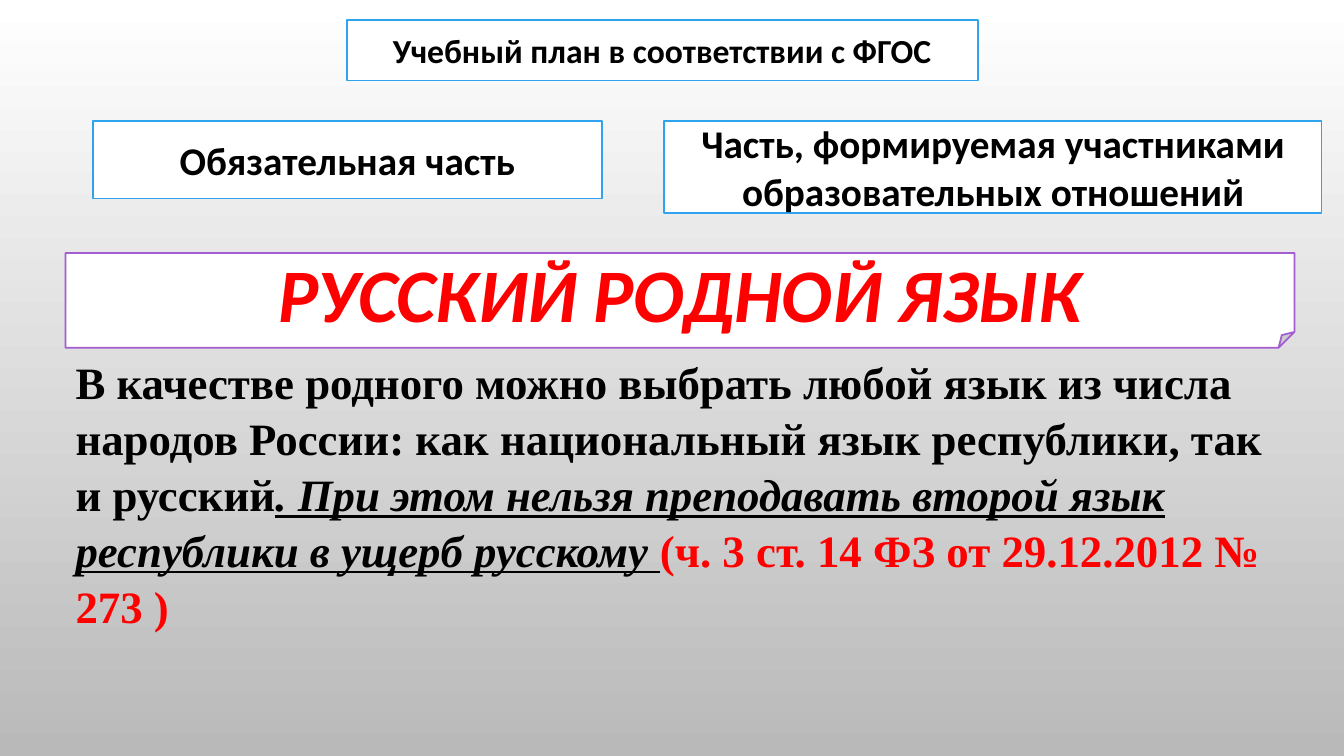
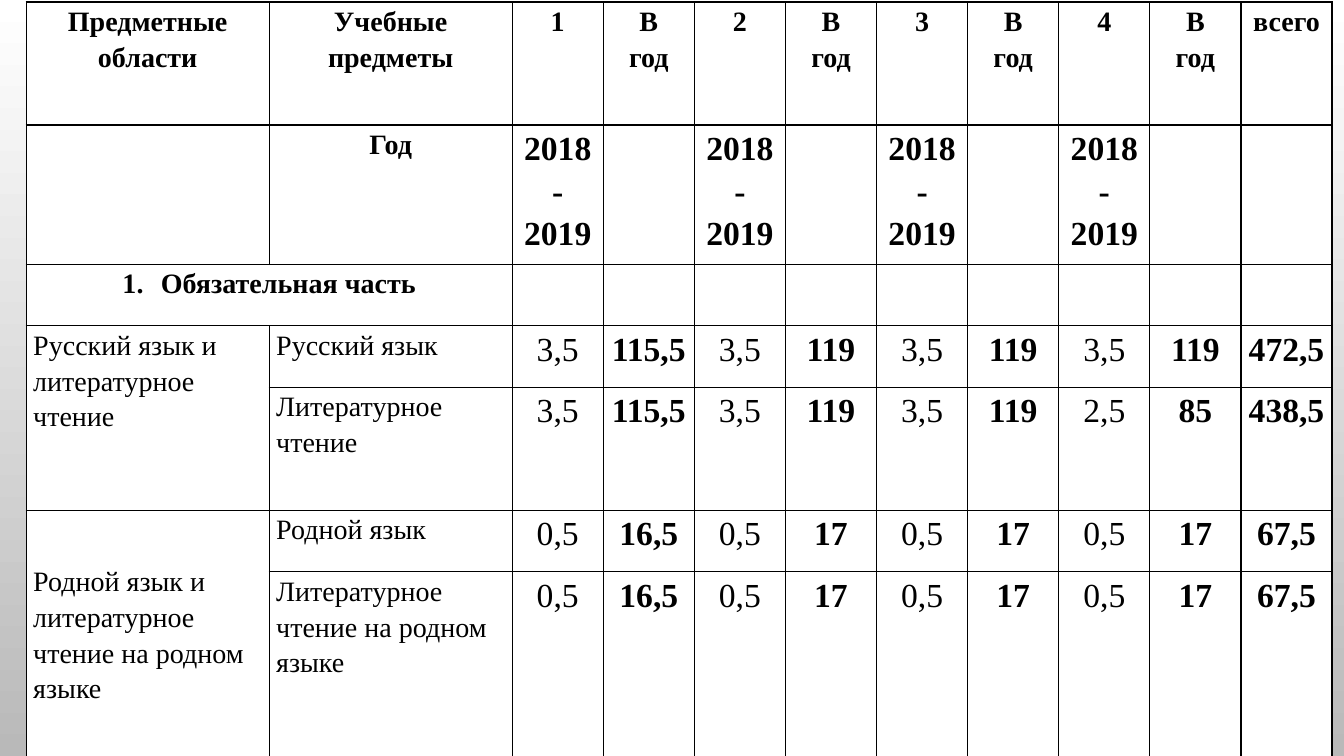
from dataclasses import dataclass
from itertools import product
from typing import Optional

from lxml import etree
from pptx import Presentation
from pptx import util as u
from pptx.dml.color import RGBColor
from pptx.enum import shapes, text
from pptx.oxml import ns

COLORS = {
    "white": "FFFFFF",
    "shade": "B9B9B9",
    "black": "000000",
    "red": "FF0000",
    "blue": "2FA3EE",
    "violet": "A35DD1",
}
SANS = "Calibri"
SERIF = "Times New Roman"
SLIDE_WIDTH = u.Inches(13.33)
SLIDE_HEIGHT = u.Inches(7.5)


@dataclass(frozen=True)
class Area:
    left: float
    top: float
    width: float
    height: float

    def lengths(self) -> tuple:
        return across(self.left), down(self.top), across(self.width), down(self.height)


@dataclass(frozen=True)
class Panel:
    area: Area
    words: str
    size: int
    preset: shapes.MSO_SHAPE = shapes.MSO_SHAPE.RECTANGLE
    line: str = "blue"
    color: str = "black"
    italic: bool = False


@dataclass(frozen=True)
class Passage:
    words: str
    color: str = "black"
    emphasis: bool = False


@dataclass(frozen=True)
class CellStyle:
    size: int
    bold: bool
    align: text.PP_ALIGN


PANELS = [
    Panel(Area(25.8, 2.67, 46.95, 8), "Учебный план в соответствии с ФГОС", 24),
    Panel(Area(49.43, 16, 48.9, 12.13),
          "Часть, формируемая участниками образовательных отношений", 28),
    Panel(Area(6.9, 16, 37.88, 10.27), "Обязательная часть", 28),
    Panel(Area(4.88, 33.47, 91.43, 12.53), "РУССКИЙ РОДНОЙ ЯЗЫК", 54,
          shapes.MSO_SHAPE.FOLDED_CORNER, "violet", "red", True),
]
LAW_AREA = Area(4.88, 46, 91.43, 37.2)
LAW_PASSAGES = [
    Passage("В качестве родного можно выбрать любой язык из числа народов России: "
            "как национальный язык республики, так и русский"),
    Passage(". При этом нельзя преподавать второй язык республики в ущерб русскому ",
            emphasis=True),
    Passage("(ч. 3 ст. 14 ФЗ от 29.12.2012 № 273 )", "red"),
]

PLAN_AREA = Area(1.95, 0.27, 97.18, 97.68)
SUBJECT_COLUMNS = 2
COLUMN_SHARES = [18.08] * SUBJECT_COLUMNS + [6.78] * 9
ROW_UNITS = [2, 2, 1, 1, 2, 1, 3]
ROW_UNIT = PLAN_AREA.height / sum(ROW_UNITS)
YEAR_ROW, SECTION_ROW, FIRST_SUBJECT_ROW, NATIVE_ROW = 1, 2, 3, 5
MERGES = [((2, 0), (2, 1)), ((3, 0), (4, 0)), ((5, 0), (6, 0))]
NATIVE_HOURS = "0,5 16,5 0,5 17 0,5 17 0,5 17 67,5".split()
PLAN_ROWS = [
    ["Предметные области", "Учебные предметы",
     *(label for grade in "1234" for label in (grade, "В\nгод")), "всего"],
    ["", "Год", *["2018-2019", ""] * 4, ""],
    ["Обязательная часть"],
    ["Русский язык и литературное чтение", "Русский язык",
     *"3,5 115,5 3,5 119 3,5 119 3,5 119 472,5".split()],
    ["", "Литературное чтение",
     *"3,5 115,5 3,5 119 3,5 119 2,5 85 438,5".split()],
    ["Родной язык и\nлитературное чтение на родном языке", "Родной язык", *NATIVE_HOURS],
    ["", "Литературное чтение на родном языке", *NATIVE_HOURS],
]


def across(percent: float) -> int:
    return round(SLIDE_WIDTH * percent / 100)


def down(percent: float) -> int:
    return round(SLIDE_HEIGHT * percent / 100)


def rgb(name: str) -> RGBColor:
    return RGBColor.from_string(COLORS[name])


def set_font(font, name: str, size: int, color: str = "black",
             bold: bool = True, italic: Optional[bool] = None) -> None:
    font.name = name
    font.size = u.Pt(size)
    font.bold = bold
    font.italic = italic
    font.color.rgb = rgb(color)


def set_background(presentation) -> None:
    fill = presentation.slide_master.background.fill
    fill.gradient()
    fill.gradient_angle = 270
    for stop, name in zip(fill.gradient_stops, ("white", "shade")):
        stop.color.rgb = rgb(name)


def add_panel(slide, panel: Panel) -> None:
    shape = slide.shapes.add_shape(panel.preset, *panel.area.lengths())
    shape.shadow.inherit = False
    shape.fill.solid()
    shape.fill.fore_color.rgb = rgb("white")
    shape.line.color.rgb = rgb(panel.line)
    shape.line.width = u.Pt(1.25)
    frame = shape.text_frame
    frame.word_wrap = True
    frame.vertical_anchor = text.MSO_ANCHOR.MIDDLE
    paragraph = frame.paragraphs[0]
    paragraph.text = panel.words
    paragraph.alignment = text.PP_ALIGN.CENTER
    set_font(paragraph.font, SANS, panel.size, panel.color, italic=panel.italic)


def add_law_text(slide) -> None:
    frame = slide.shapes.add_textbox(*LAW_AREA.lengths()).text_frame
    frame.word_wrap = True
    paragraph = frame.paragraphs[0]
    paragraph.line_spacing = 1.04
    set_font(paragraph.font, SERIF, 32)
    for passage in LAW_PASSAGES:
        run = paragraph.add_run()
        run.text = passage.words
        run.font.color.rgb = rgb(passage.color)
        run.font.italic = passage.emphasis
        run.font.underline = passage.emphasis


def set_borders(cell) -> None:
    properties = cell._tc.get_or_add_tcPr()
    for side in ("lnL", "lnR", "lnT", "lnB"):
        border = etree.SubElement(properties, ns.qn(f"a:{side}"), w=str(u.Pt(1)))
        fill = etree.SubElement(border, ns.qn("a:solidFill"))
        etree.SubElement(fill, ns.qn("a:srgbClr"), val=COLORS["black"])


def number_paragraph(paragraph) -> None:
    properties = paragraph._p.get_or_add_pPr()
    indent = u.Inches(0.38)
    properties.set("marL", str(indent))
    properties.set("indent", str(-indent))
    etree.SubElement(properties, ns.qn("a:buFont"), typeface="+mj-lt")
    etree.SubElement(properties, ns.qn("a:buAutoNum"), type="arabicPeriod")


def cell_style(row: int, column: int) -> CellStyle:
    heading = row < FIRST_SUBJECT_ROW
    subject = column < SUBJECT_COLUMNS
    yearly = not subject and (column % 2 == 1 or column == len(COLUMN_SHARES) - 1)
    large = not subject and row >= YEAR_ROW
    left = subject and not heading
    return CellStyle(24 if large else 20, heading or yearly,
                     text.PP_ALIGN.LEFT if left else text.PP_ALIGN.CENTER)


def write_cell(cell, words: str, style: CellStyle, numbered: bool) -> None:
    cell.text = words
    for paragraph in cell.text_frame.paragraphs:
        paragraph.alignment = style.align
        paragraph.line_spacing = 1.15
        if numbered:
            number_paragraph(paragraph)
        set_font(paragraph.font, SERIF, style.size, bold=style.bold)


def add_plan_table(slide) -> None:
    table = slide.shapes.add_table(
        len(ROW_UNITS), len(COLUMN_SHARES), *PLAN_AREA.lengths()).table
    table.first_row = table.horz_banding = False
    for column, share in zip(table.columns, COLUMN_SHARES):
        column.width = across(share)
    for row, units in zip(table.rows, ROW_UNITS):
        row.height = down(ROW_UNIT * units)
    for row, column in product(range(len(ROW_UNITS)), range(len(COLUMN_SHARES))):
        cell = table.cell(row, column)
        set_borders(cell)
        cell.fill.solid()
        cell.fill.fore_color.rgb = rgb("white")
        cell.margin_left = cell.margin_right = u.Inches(0.07)
        cell.margin_top = cell.margin_bottom = 0
    for first, last in MERGES:
        table.cell(*first).merge(table.cell(*last))
    for row, entries in enumerate(PLAN_ROWS):
        for column, words in enumerate(entries):
            if words:
                write_cell(table.cell(row, column), words,
                           cell_style(row, column), row == SECTION_ROW)
    table.cell(NATIVE_ROW, 0).vertical_anchor = text.MSO_ANCHOR.MIDDLE


def main() -> None:
    presentation = Presentation()
    presentation.slide_width = SLIDE_WIDTH
    presentation.slide_height = SLIDE_HEIGHT
    set_background(presentation)
    blank = presentation.slide_layouts[6]
    overview = presentation.slides.add_slide(blank)
    for panel in PANELS:
        add_panel(overview, panel)
    add_law_text(overview)
    add_plan_table(presentation.slides.add_slide(blank))
    presentation.save("out.pptx")


if __name__ == "__main__":
    main()
